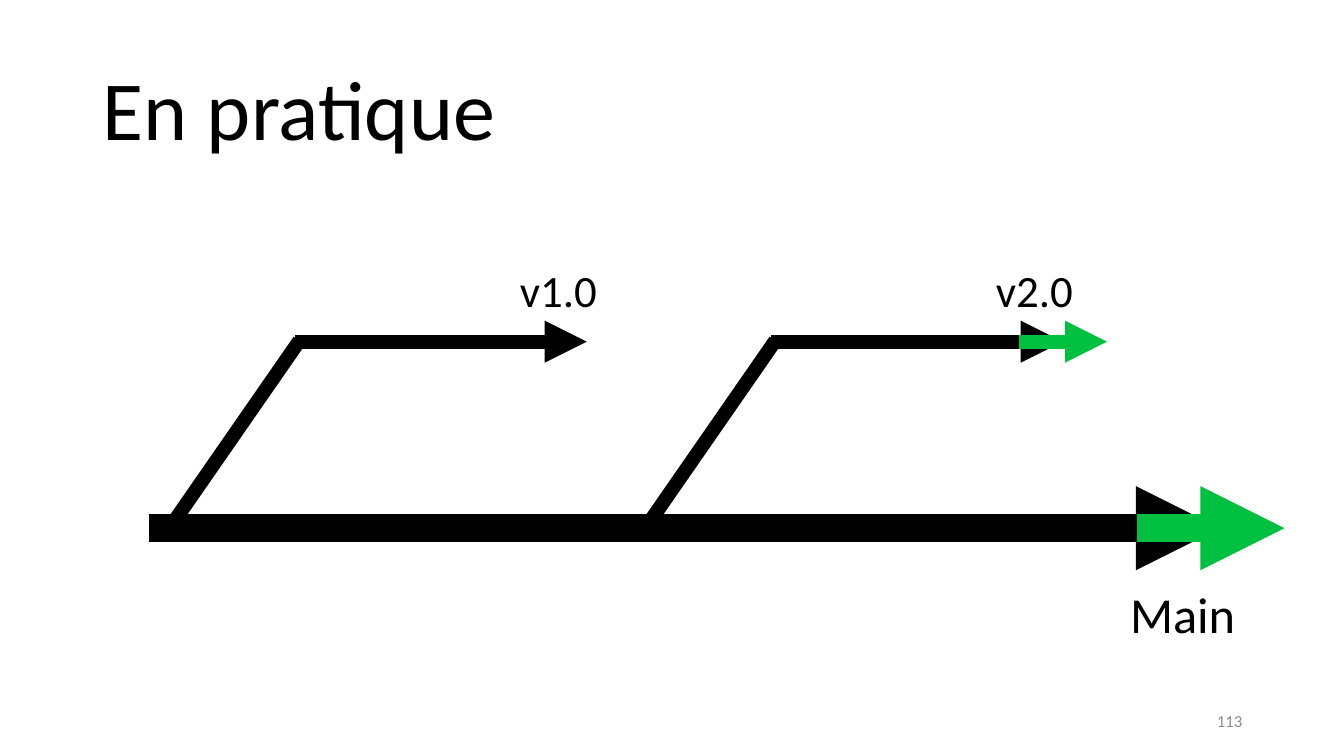
from lxml.etree import SubElement
from pptx import Presentation
from pptx.dml.color import RGBColor
from pptx.enum.shapes import MSO_CONNECTOR as Connector
from pptx.enum.text import MSO_ANCHOR as Anchor, PP_ALIGN as Align
from pptx.oxml.ns import qn
from pptx.util import Inches, Pt

BLACK = RGBColor(0x00, 0x00, 0x00)
GREEN = RGBColor(0x00, 0xC0, 0x40)
GRAY = RGBColor(0x8C, 0x8C, 0x8C)

MAIN_Y = 5.24
BRANCH_Y = 3.39
MAIN_WIDTH = 20
BRANCH_WIDTH = 10
# Left end of each release branch's horizontal arrow
BRANCHES = [("v1.0", 2.93), ("v2.0", 7.65)]


def write(box, text, size, color=BLACK, align=Align.LEFT, anchor=Anchor.TOP):
    frame = box.text_frame
    frame.word_wrap = True
    frame.vertical_anchor = anchor
    para = frame.paragraphs[0]
    para.alignment = align
    span = para.add_run()
    span.text = text
    for name, value in {"name": "Calibri", "size": Pt(size), "bold": False}.items():
        setattr(span.font, name, value)
    span.font.color.rgb = color
    return para


def add_title(page, text):
    title = page.shapes.title
    place = {"left": 0.92, "top": 0.4, "width": 11.5, "height": 1.45}
    for name, value in place.items():
        setattr(title, name, Inches(value))
    write(title, text, 60, anchor=Anchor.MIDDLE).line_spacing = 0.9


def add_label(page, text, place, size, **style):
    box = page.shapes.add_textbox(*(Inches(value) for value in place))
    write(box, text, size, **style)


def add_line(page, start, end, width, color=BLACK, arrow=True):
    line = page.shapes.add_connector(
        Connector.STRAIGHT, *(Inches(value) for value in (*start, *end)))
    line.line.color.rgb = color
    line.line.width = Pt(width)
    if arrow:
        SubElement(line.line._get_or_add_ln(), qn("a:tailEnd"), type="triangle")
    SubElement(line._element.spPr, qn("a:effectLst"))


def add_branch(page, name, left):
    add_line(page, (left, BRANCH_Y), (left + 2.89, BRANCH_Y), BRANCH_WIDTH)
    add_line(page, (left + 0.04, BRANCH_Y - 0.01), (left - 1.25, MAIN_Y),
             BRANCH_WIDTH, arrow=False)
    add_label(page, name, (left + 1.53, 2.56, 2.16, 0.64), 32, align=Align.CENTER)


def main():
    deck = Presentation()
    deck.slide_width, deck.slide_height = Inches(13.33), Inches(7.5)
    page = deck.slides.add_slide(deck.slide_layouts[5])

    # Title and page number
    add_title(page, "En pratique")
    add_label(page, "113", (9.42, 6.95, 3, 0.4), 12, color=GRAY,
              align=Align.RIGHT, anchor=Anchor.MIDDLE)

    # Main line
    add_line(page, (1.48, MAIN_Y), (12.1, MAIN_Y), MAIN_WIDTH)
    add_label(page, "Main", (10.65, 5.74, 2.16, 0.71), 36, align=Align.CENTER)

    # Release branches
    for name, left in BRANCHES:
        add_branch(page, name, left)

    # New commits
    add_line(page, (10.11, BRANCH_Y), (10.98, BRANCH_Y), BRANCH_WIDTH, GREEN)
    add_line(page, (11.28, MAIN_Y), (12.74, MAIN_Y), MAIN_WIDTH, GREEN)

    deck.save("out.pptx")


if __name__ == "__main__":
    main()
